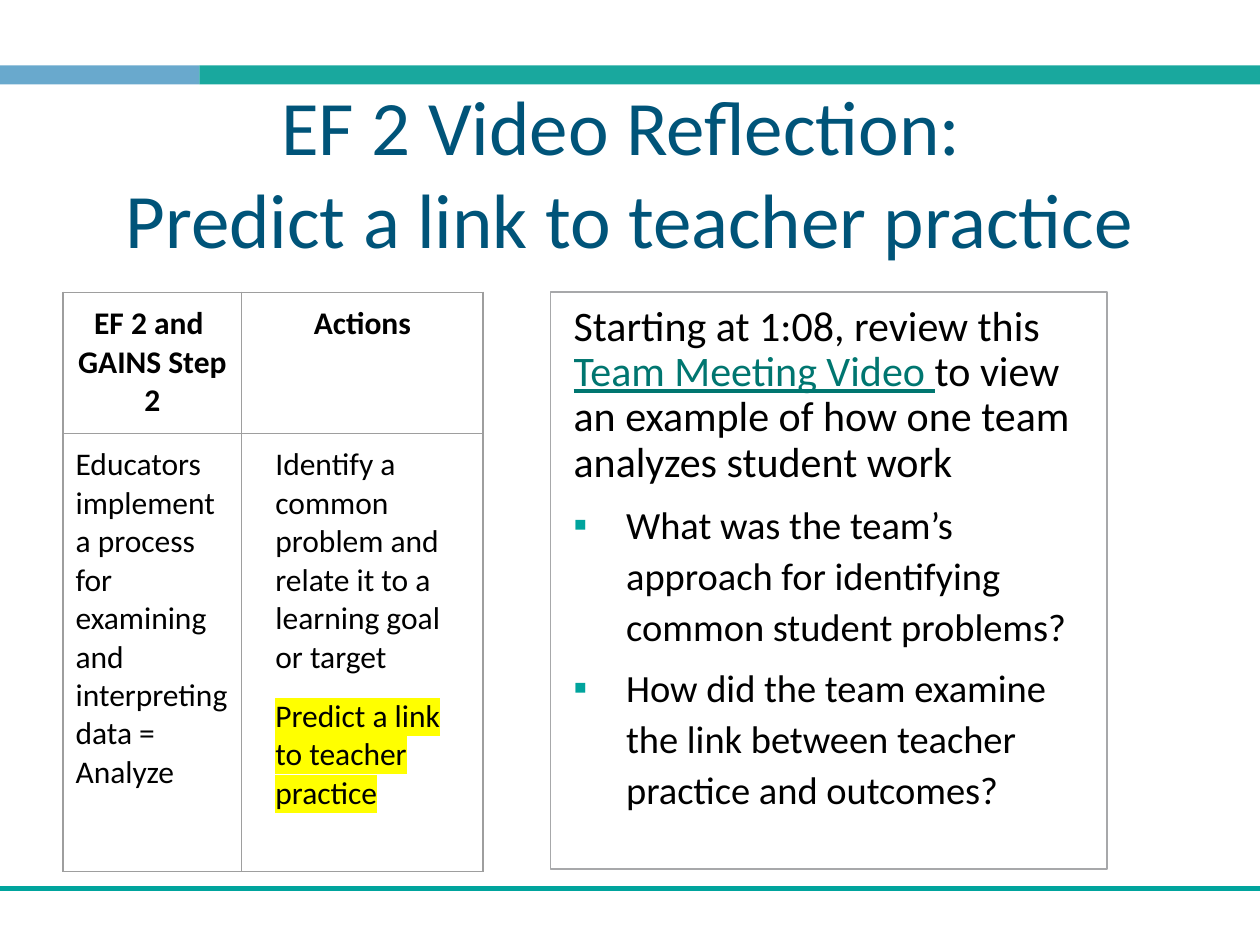
from lxml import etree
from pptx import Presentation
from pptx import util as u
from pptx.dml.color import RGBColor
from pptx.enum import shapes, text
from pptx.oxml import ns

FONT = "Calibri"
BLACK = "000000"
TEAL = "00A49D"
BORDER = "9E9E9E"
MARGIN = 7.2
PANEL_TOP = 167


def color(value):
    """Return the colour for a hex string."""
    return RGBColor.from_string(value)


def add_element(parent, tag, **attributes):
    """Append a drawing element with attributes to a parent."""
    return etree.SubElement(parent, ns.qn(tag), attributes)


def place(shape, left, top, width, height):
    """Position and size a shape in points."""
    shape.left, shape.top = u.Pt(left), u.Pt(top)
    shape.width, shape.height = u.Pt(width), u.Pt(height)


def set_margins(frame):
    """Give a text frame or cell equal margins on all sides."""
    frame.margin_left = frame.margin_right = u.Pt(MARGIN)
    frame.margin_top = frame.margin_bottom = u.Pt(MARGIN)


def add_run(paragraph, words, size, fill=BLACK, bold=False, underline=False, highlight=None):
    """Add one formatted run to a paragraph."""
    run = paragraph.add_run()
    run.text = words
    font = run.font
    font.name, font.size, font.bold = FONT, u.Pt(size), bold
    font.underline = underline
    font.color.rgb = color(fill)
    if highlight:
        properties = run._r.get_or_add_rPr()
        mark = etree.Element(ns.qn("a:highlight"))
        add_element(mark, "a:srgbClr", val=highlight)
        properties.find(ns.qn("a:solidFill")).addnext(mark)


def format_paragraph(paragraph, left=0, indent=0, bullet=None, spacing=1.0, after=0):
    """Set indents, bullet and spacing of a paragraph."""
    properties = paragraph._p.get_or_add_pPr()
    properties.set("marL", str(u.Pt(left)))
    properties.set("indent", str(u.Pt(indent)))
    if bullet:
        add_element(add_element(properties, "a:buClr"), "a:srgbClr", val=TEAL)
        add_element(properties, "a:buFont", typeface=FONT)
        add_element(properties, "a:buChar", char=bullet)
    else:
        add_element(properties, "a:buNone")
    paragraph.line_spacing = spacing
    paragraph.space_before, paragraph.space_after = u.Pt(0), u.Pt(after)


def add_bar(slide, left, width, fill):
    """Add one part of the band above the title."""
    bar = slide.shapes.add_shape(
        shapes.MSO_SHAPE.RECTANGLE, u.Pt(left), u.Pt(37.4), u.Pt(width), u.Pt(10.8))
    bar.shadow.inherit = False
    bar.fill.solid()
    bar.fill.fore_color.rgb = color(fill)
    bar.line.fill.background()


def add_footer_line(slide):
    """Add the rule along the foot of the slide."""
    line = slide.shapes.add_connector(
        shapes.MSO_CONNECTOR.STRAIGHT, u.Pt(0), u.Pt(507.6), u.Pt(720), u.Pt(507.6))
    line.line.color.rgb = color(TEAL)
    line.line.width = u.Pt(3)
    add_element(line._element.spPr, "a:effectLst")


def fill_title(title):
    """Write the two title lines."""
    place(title, 36, 54.7, 648, 86.4)
    frame = title.text_frame
    set_margins(frame)
    frame.auto_size = text.MSO_AUTO_SIZE.NONE
    frame.vertical_anchor = text.MSO_ANCHOR.MIDDLE
    paragraph = frame.paragraphs[0]
    paragraph.alignment = text.PP_ALIGN.CENTER
    add_run(paragraph, "EF 2 Video Reflection: ", 44, "005479")
    paragraph.add_line_break()
    add_run(paragraph, "Predict a link to teacher practice", 44, "005479")


def fill_body(body):
    """Write the video task and its questions in the outlined panel."""
    place(body, 314.6, PANEL_TOP, 318.2, 329.8)
    body.line.color.rgb = color("A7A8AA")
    body.line.width = u.Pt(1)
    frame = body.text_frame
    set_margins(frame)
    frame.auto_size = text.MSO_AUTO_SIZE.NONE
    frame.vertical_anchor = text.MSO_ANCHOR.TOP
    task = frame.paragraphs[0]
    format_paragraph(task, left=6, spacing=0.9, after=6)
    add_run(task, "Starting at 1:08, review this ", 24)
    add_run(task, "Team Meeting Video ", 24, "007670", underline=True)
    add_run(task, "to view an example of how one team analyzes student work", 24)
    for question in (
        "What was the team’s approach for identifying common student problems?",
        "How did the team examine the link between teacher practice and outcomes?",
    ):
        paragraph = frame.add_paragraph()
        format_paragraph(paragraph, 36, -30, "▪", spacing=1.1, after=6)
        add_run(paragraph, question, 22)


def add_borders(cell):
    """Draw a thin border on each side of a cell."""
    properties = cell._tc.get_or_add_tcPr()
    for position, side in enumerate(("a:lnL", "a:lnR", "a:lnT", "a:lnB")):
        line = etree.Element(ns.qn(side), w=str(u.Pt(0.75)))
        add_element(add_element(line, "a:solidFill"), "a:srgbClr", val=BORDER)
        properties.insert(position, line)


def fill_cell(cell, lines, header=False, left=0, marked=None):
    """Write the paragraphs of a cell, highlighting the marked one."""
    set_margins(cell)
    cell.fill.background()
    add_borders(cell)
    frame = cell.text_frame
    for index, words in enumerate(lines):
        paragraph = frame.add_paragraph() if index else frame.paragraphs[0]
        format_paragraph(paragraph, left, after=0 if header else 12)
        paragraph.alignment = text.PP_ALIGN.CENTER if header else text.PP_ALIGN.LEFT
        add_run(paragraph, words, 18, bold=header,
                highlight="FFFF00" if index == marked else None)


def add_actions_table(slide):
    """Add the table of steps and actions."""
    widths, heights = (102.2, 137.8), (80.6, 250.4)
    table = slide.shapes.add_table(
        2, 2, u.Pt(36), u.Pt(PANEL_TOP), u.Pt(sum(widths)), u.Pt(sum(heights))).table
    table.first_row = table.horz_banding = False
    for column, width in zip(table.columns, widths):
        column.width = u.Pt(width)
    for row, height in zip(table.rows, heights):
        row.height = u.Pt(height)
    fill_cell(table.cell(0, 0), ["EF 2 and ", "GAINS Step 2"], header=True)
    fill_cell(table.cell(0, 1), ["Actions"], header=True)
    fill_cell(table.cell(1, 0), [
        "Educators implement a process for examining and interpreting data = Analyze"])
    fill_cell(table.cell(1, 1), [
        "Identify a common problem and relate it to a learning goal or target",
        "Predict a link to teacher practice"], left=12, marked=1)


def main():
    """Build and save the presentation."""
    presentation = Presentation()
    presentation.slide_width, presentation.slide_height = u.Pt(720), u.Pt(540)
    slide = presentation.slides.add_slide(presentation.slide_layouts[1])
    add_bar(slide, 0, 114, "69A9CD")
    add_bar(slide, 114, 606, "19A89E")
    add_footer_line(slide)
    fill_title(slide.shapes.title)
    fill_body(slide.placeholders[1])
    add_actions_table(slide)
    presentation.save("out.pptx")


if __name__ == "__main__":
    main()
